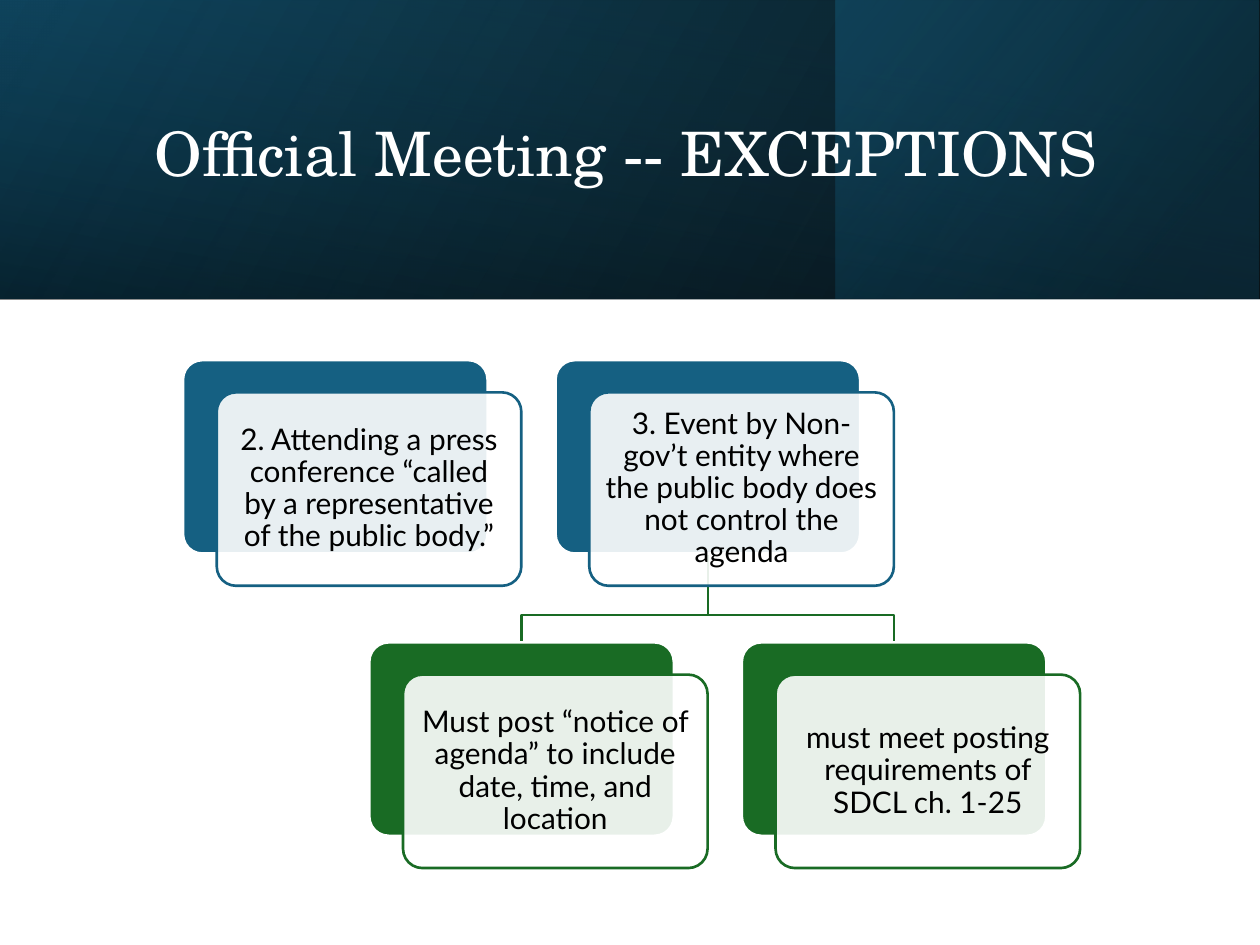
"""Build the slide on exceptions to an official meeting."""
from dataclasses import dataclass

from lxml import etree
from pptx import Presentation
from pptx.dml.color import RGBColor
from pptx.enum.shapes import MSO_SHAPE
from pptx.enum.text import MSO_ANCHOR, PP_ALIGN
from pptx.oxml import parse_xml
from pptx.oxml.ns import qn
from pptx.util import Cm, Pt

RECT, ROUND = MSO_SHAPE.RECTANGLE, MSO_SHAPE.ROUNDED_RECTANGLE
MIDDLE = MSO_ANCHOR.MIDDLE
LEFT, CENTER = PP_ALIGN.LEFT, PP_ALIGN.CENTER
SPACE = "http://schemas.openxmlformats.org/drawingml/2006/main"


@dataclass(frozen=True)
class Theme:
    white: str = "FFFFFF"
    black: str = "000000"
    blue: str = "156082"
    green: str = "196B24"
    deep: str = "104862"
    navy: str = "0B3041"
    serif: str = "TeX Gyre Schola"
    sans: str = "Lato"
    head: float = 35
    body: float = 17
    line: float = 1.5


def write(box, text, font, size, color, align=LEFT, inset=(0.25, 0.13), after=0):
    frame = box.text_frame
    frame.word_wrap = True
    frame.vertical_anchor = MIDDLE
    frame.margin_left = frame.margin_right = Cm(inset[0])
    frame.margin_top = frame.margin_bottom = Cm(inset[1])
    para = frame.paragraphs[0]
    para.alignment = align
    para.line_spacing = 0.9
    para.space_after = Pt(after)
    run = para.add_run()
    run.text = text
    run.font.name = font
    run.font.size = Pt(size)
    run.font.color.rgb = RGBColor.from_string(color)


class Painter:
    def __init__(self, slide, theme):
        self.slide = slide
        self.theme = theme

    def stroke(self, shape, color):
        shape.shadow.inherit = False
        shape.line.color.rgb = RGBColor.from_string(color)
        shape.line.width = Pt(self.theme.line)

    def band(self, area, stops, angle, turn=0):
        shape = self.slide.shapes.add_shape(RECT, *map(Cm, area))
        shape.shadow.inherit = False
        shape.line.fill.background()
        shape.fill.background()
        shape.rotation = turn
        props = shape._element.spPr
        props.find(qn("a:xfrm")).set("flipH", "1")
        marks = "".join(
            f'<a:gs pos="{pos * 1000}"><a:srgbClr val="{color}">'
            f'<a:alpha val="{alpha * 1000}"/></a:srgbClr></a:gs>'
            for pos, color, alpha in stops
        )
        blend = parse_xml(
            f'<a:gradFill xmlns:a="{SPACE}" rotWithShape="1"><a:gsLst>{marks}</a:gsLst>'
            f'<a:lin ang="{angle * 60000}" scaled="0"/></a:gradFill>'
        )
        props.replace(props.find(qn("a:noFill")), blend)

    def text(self, area, words, **style):
        write(self.slide.shapes.add_textbox(*map(Cm, area)), words, **style)

    def panel(self, area, fill, line, alpha=100):
        shape = self.slide.shapes.add_shape(ROUND, *map(Cm, area))
        shape.adjustments[0] = 0.1
        shape.fill.solid()
        shape.fill.fore_color.rgb = RGBColor.from_string(fill)
        self.stroke(shape, line)
        if alpha < 100:
            color = shape._element.spPr.find(qn("a:solidFill"))[0]
            etree.SubElement(color, qn("a:alpha")).set("val", str(alpha * 1000))

    def card(self, left, top, size, words, color):
        theme = self.theme
        wide, high = size
        self.panel((left, top, wide, high), color, theme.white)
        left, top = left + 0.68, top + 0.65
        self.panel((left, top, wide, high), theme.white, color, 90)
        pad = 0.11
        self.text((left + pad, top + pad, wide - 2 * pad, high - 2 * pad), words,
                  font=theme.sans, size=theme.body, color=theme.black,
                  align=CENTER, inset=(0.17, 0.17), after=6)

    def elbow(self, start, bend, end, color):
        points = [(start[0], bend), (end[0], bend), end]
        path = self.slide.shapes.build_freeform(Cm(start[0]), Cm(start[1]))
        path.add_line_segments([(Cm(x), Cm(y)) for x, y in points], close=False)
        shape = path.convert_to_shape()
        shape.fill.background()
        self.stroke(shape, color)


def main():
    deck = Presentation()
    deck.slide_width, deck.slide_height = Cm(25.4), Cm(19.05)
    theme = Theme()
    paint = Painter(deck.slides.add_slide(deck.slide_layouts[6]), theme)

    high = 6.02
    paint.band((0, 0, 25.4, high), [(0, theme.black, 96), (100, theme.deep, 100)], 330)
    paint.band((16.84, 0, 8.54, high), [(19, theme.navy, 68), (100, theme.blue, 48)], 320)
    paint.band((9.68, -9.68, high, 25.4),
               [(23, theme.deep, 16), (99, theme.black, 45)], 350, turn=270)
    paint.text((2.87, 0.97, 20.24, 4.37), "Official Meeting -- EXCEPTIONS",
               font=theme.serif, size=theme.head, color=theme.white)

    size = wide, tall = 6.14, 3.9
    left, step = 3.69, 7.51
    upper, lower = 7.26, 12.95
    trunk = left + step + wide / 2
    for side in (1, -1):
        paint.elbow((trunk, upper + tall), 12.4,
                    (trunk + side * step / 2, lower), theme.green)

    cards = [
        (0, upper, theme.blue,
         "2. Attending a press conference “called by a representative of the public body.”"),
        (1, upper, theme.blue,
         "3. Event by Non-gov’t entity where the public body does not control the agenda"),
        (0.5, lower, theme.green,
         "Must post “notice of agenda” to include date, time, and location"),
        (1.5, lower, theme.green, "must meet posting requirements of SDCL ch. 1-25"),
    ]
    for column, top, color, words in cards:
        paint.card(left + column * step, top, size, words, color)

    deck.save("out.pptx")


if __name__ == "__main__":
    main()
